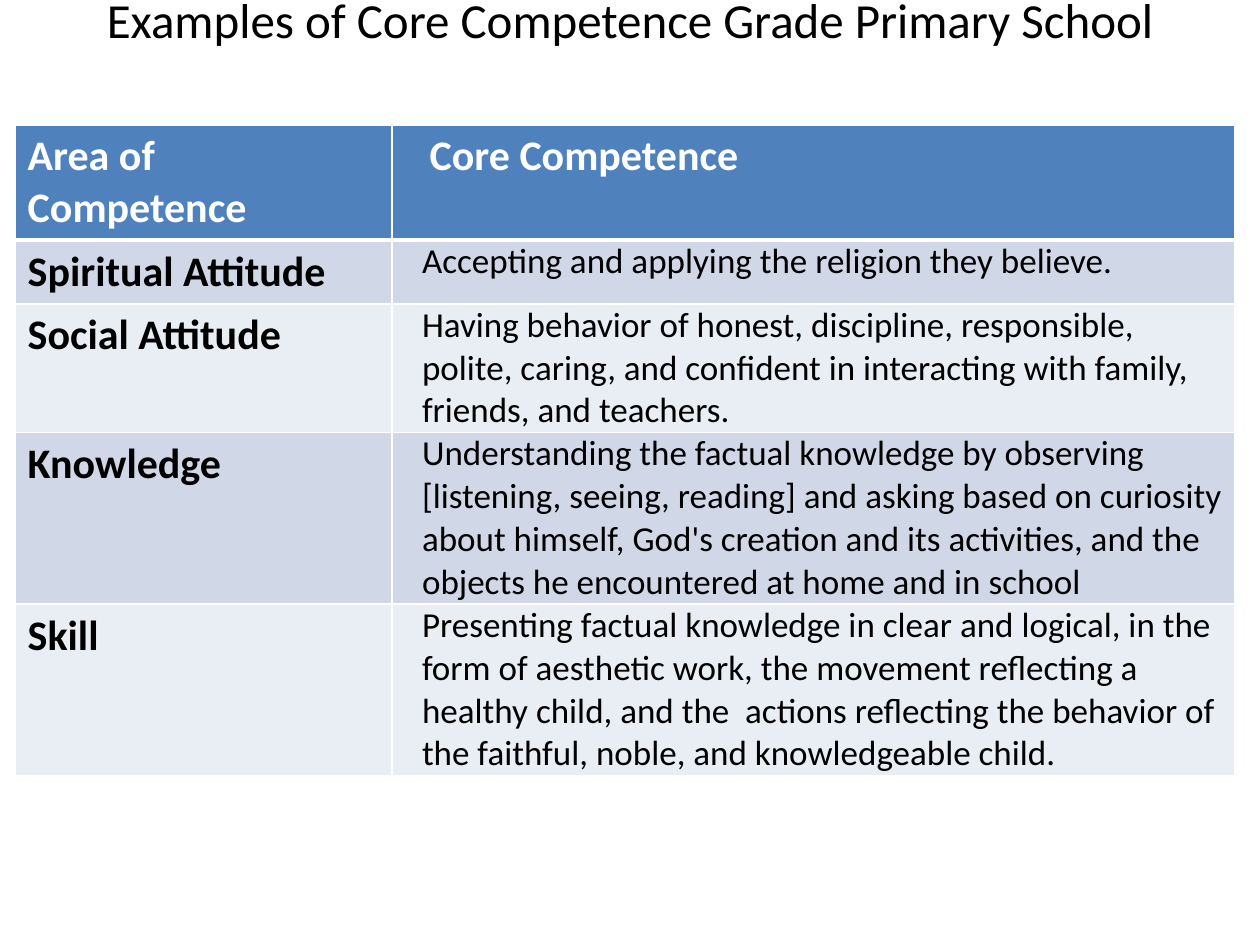
from lxml import etree
from pptx import Presentation
from pptx import util as u
from pptx.dml.color import RGBColor
from pptx.enum import text
from pptx.oxml.ns import qn

ROWS = [
    ("Area of Competence", "Core Competence"),
    ("Spiritual Attitude", "Accepting and applying the religion they believe."),
    ("Social Attitude",
     "Having behavior of honest, discipline, responsible, polite, caring, "
     "and confident in interacting with family, friends, and teachers."),
    ("Knowledge",
     "Understanding the factual knowledge by observing [listening, seeing, "
     "reading] and asking based on curiosity about himself, God's creation and "
     "its activities, and the objects he encountered at home and in school"),
    ("Skill",
     "Presenting factual knowledge in clear and logical, in the form of "
     "aesthetic work, the movement reflecting a healthy child, and the  actions "
     "reflecting the behavior of the faithful, noble, and knowledgeable child."),
]
COLUMN_WIDTHS = [2.99, 6.69]
ROW_HEIGHTS = [0.91, 0.5, 1.02, 1.36, 1.36]


def rgb(value):
    return RGBColor.from_string(value)


class Deck:
    FONT = "Calibri"
    BLACK, WHITE = "000000", "FFFFFF"
    HEADER, BANDS = "4F81BD", ("E9EDF4", "D0D8E8")

    def __init__(self, width, height):
        self.prs = Presentation()
        self.prs.slide_width = u.Inches(width)
        self.prs.slide_height = u.Inches(height)
        self.slide = self.prs.slides.add_slide(self.prs.slide_layouts[5])

    def box(self, left, top, width, height):
        """Turn shares of the slide's size into lengths."""
        w, h = self.prs.slide_width, self.prs.slide_height
        return int(left * w), int(top * h), int(width * w), int(height * h)

    def style(self, p, size, color, bold=False):
        for r in p.runs:
            f = r.font
            f.name, f.size, f.bold = self.FONT, u.Pt(size), bold
            f.color.rgb = rgb(color)

    def title(self, words, left, top, width, height):
        sp = self.slide.shapes.title
        sp.left, sp.top, sp.width, sp.height = self.box(left, top, width, height)
        tf = sp.text_frame
        tf.text = words
        tf.auto_size = text.MSO_AUTO_SIZE.NONE
        tf.vertical_anchor = text.MSO_ANCHOR.MIDDLE
        tf.margin_top, tf.margin_bottom = 0, u.Inches(0.42)
        p = tf.paragraphs[0]
        p.alignment = text.PP_ALIGN.CENTER
        self.style(p, 28, self.BLACK)

    def borders(self, cell, bottom=1):
        tc_pr = cell._tc.get_or_add_tcPr()
        for side, points in (("L", 1), ("R", 1), ("T", 1), ("B", bottom)):
            ln = etree.SubElement(tc_pr, qn(f"a:ln{side}"), w=str(u.Pt(points)))
            fill = etree.SubElement(ln, qn("a:solidFill"))
            etree.SubElement(fill, qn("a:srgbClr"), val=self.WHITE)

    def cell(self, cell, words, row, col):
        header, detail = row == 0, row > 0 and col == 1
        cell.text = words
        p = cell.text_frame.paragraphs[0]
        self.style(p, 20 if detail else 24,
                   self.WHITE if header else self.BLACK, not detail)
        if detail:
            cell.margin_left = cell.margin_right = u.Inches(0.04)
            cell.margin_top = cell.margin_bottom = 0
        if col == 1:
            indent = "marL" if detail else "indent"
            p._p.get_or_add_pPr().set(indent, str(u.Inches(0.2)))
        self.borders(cell, 3 if header else 1)
        cell.fill.solid()
        cell.fill.fore_color.rgb = rgb(self.HEADER if header else self.BANDS[row % 2])

    def table(self, rows, widths, heights, left, top, width, height):
        table = self.slide.shapes.add_table(
            len(rows), len(widths), *self.box(left, top, width, height)).table
        for column, size in zip(table.columns, widths):
            column.width = u.Inches(size)
        for line, size in zip(table.rows, heights):
            line.height = u.Inches(size)
        for i, row in enumerate(rows):
            for j, words in enumerate(row):
                self.cell(table.cell(i, j), words, i, j)


def main():
    deck = Deck(10, 7.5)
    deck.title("Examples of Core Competence Grade Primary School",
               0.05, -0.004, 0.9, 0.105)
    deck.table(ROWS, COLUMN_WIDTHS, ROW_HEIGHTS, 0.012, 0.132, 0.968, 0.687)
    deck.prs.save("out.pptx")


if __name__ == "__main__":
    main()
